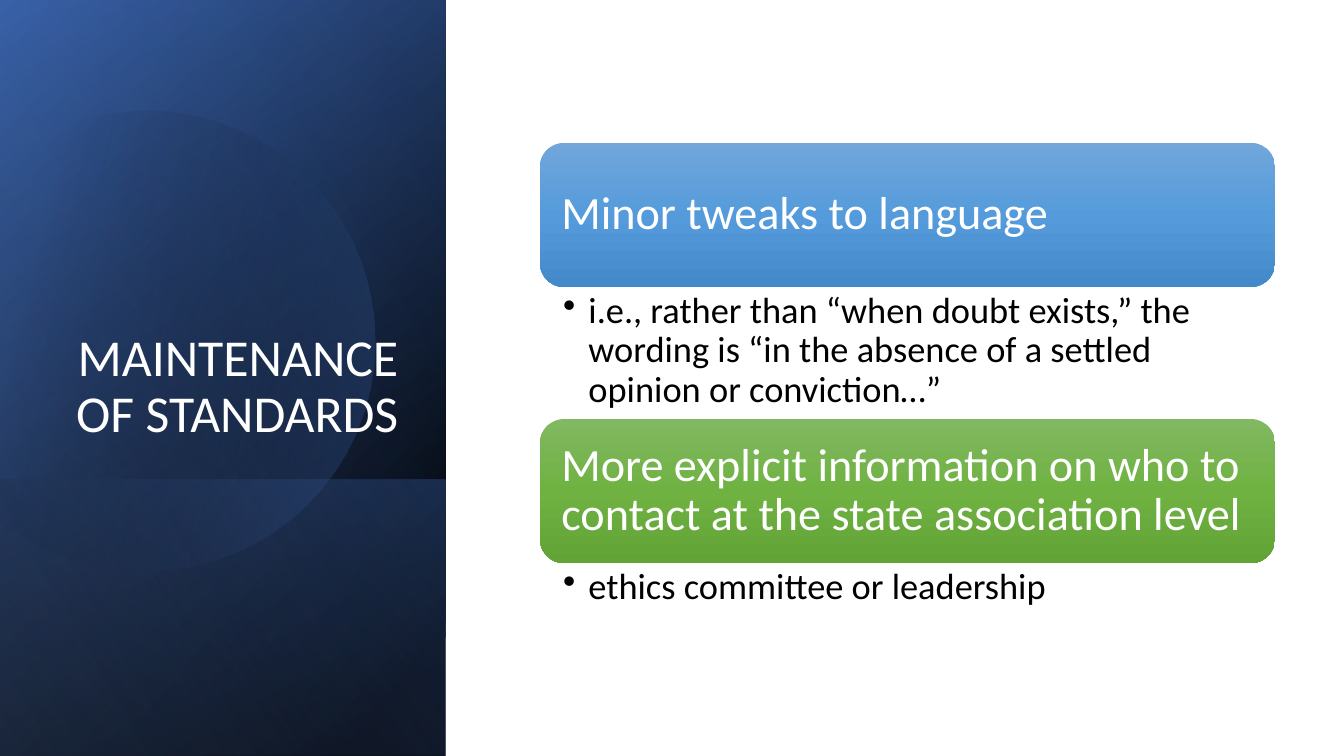
from math import cos, radians, sin

from lxml import etree
from pptx import Presentation
from pptx.dml.color import RGBColor
from pptx.enum.shapes import MSO_SHAPE
from pptx.enum.text import MSO_ANCHOR, PP_ALIGN
from pptx.oxml.ns import qn
from pptx.util import Cm, Pt

TITLE = "MAINTENANCE OF STANDARDS"
CARDS = [
    ("Minor tweaks to language",
     "i.e., rather than “when doubt exists,” the wording is “in the absence of a settled opinion or conviction…”",
     3.33, [(0, "71A6DB", 100), (50, "559BDB", 100), (100, "448ACA", 100)]),
    ("More explicit information on who to contact at the state association level",
     "ethics committee or leadership",
     1.52, [(0, "81B861", 100), (50, "6FB242", 100), (100, "62A336", 100)]),
]

SLIDE_W, SLIDE_H = 33.87, 19.05
PANEL_W = 11.23
BASE_LAYERS = [
    (SLIDE_H, [(8, "000000", 100), (100, "2F5597", 100)], 50),
    (SLIDE_H, [(0, "000000", 0), (99, "4472C4", 46)], 30),
    (6.96, [(2, "4472C4", 29), (100, "000000", 30)], 130),
]
TOP_LAYER = (SLIDE_H, [(0, "000000", 0), (99, "8FAADC", 11)], 120)

DISC_STOPS = [(29, "000000", 0), (100, "4472C4", 43)]
DISC_CENTER, DISC_TURN = (4.03, 8.5), 343.9
DISC_START = (3.78, 2.79)
DISC_SEGMENTS = [
    [(6.25, 2.84), (8.51, 4.5), (9.22, 6.99)],
    [(10.11, 10.08), (8.33, 13.28), (5.26, 14.17)],
    [(3.33, 14.73), (1.35, 14.25), (-0.08, 13.06)],
    [(-0.38, 12.78)],
    [(-0.38, 4.45)],
    [(0, 4.09)],
    [(0.58, 3.61), (1.27, 3.25), (2.03, 3.02)],
    [(2.62, 2.87), (3.2, 2.79), DISC_START],
]
CURVE_STEPS = 16
CARD_LEFT, CARD_TOP, CARD_W, CARD_H = 13.61, 3.6, 18.52, 3.63


def paint(shape, stops, angle):
    """Give a shape a linear gradient of (position, hex, opacity) stops."""
    shape.shadow.inherit = False
    shape.line.fill.background()
    shape.fill.background()
    gradient = etree.Element(qn("a:gradFill"), rotWithShape="1")
    stop_list = etree.SubElement(gradient, qn("a:gsLst"))
    for position, color, opacity in stops:
        stop = etree.SubElement(stop_list, qn("a:gs"), pos=str(position * 1000))
        tone = etree.SubElement(stop, qn("a:srgbClr"), val=color)
        if opacity < 100:
            etree.SubElement(tone, qn("a:alpha"), val=str(opacity * 1000))
    etree.SubElement(gradient, qn("a:lin"), ang=str(angle * 60000), scaled="0")
    properties = shape.element.spPr
    properties.replace(properties.find(qn("a:noFill")), gradient)


def write(shape, text, size, color="FFFFFF", align=PP_ALIGN.LEFT,
          anchor=MSO_ANCHOR.TOP, insets=(0.25, 0.13, 0.25, 0.13), bullet=None):
    """Fill a shape with one formatted paragraph."""
    frame = shape.text_frame
    frame.word_wrap = True
    frame.vertical_anchor = anchor
    (frame.margin_left, frame.margin_top,
     frame.margin_right, frame.margin_bottom) = map(Cm, insets)
    paragraph = frame.paragraphs[0]
    paragraph.alignment = align
    paragraph.line_spacing = 0.9
    run = paragraph.add_run()
    run.text = text
    run.font.name = "Calibri"
    run.font.size = Pt(size)
    run.font.color.rgb = RGBColor.from_string(color)
    if bullet:
        paragraph.level = 1
        properties = paragraph._p.get_or_add_pPr()
        properties.set("marL", str(Cm(0.64)))
        properties.set("indent", str(-Cm(0.64)))
        etree.SubElement(properties, qn("a:buChar"), char=bullet)


def add_layer(shapes, length, stops, angle):
    """Add a turned, mirrored panel layer that ends at the slide's bottom."""
    layer = shapes.add_shape(
        MSO_SHAPE.RECTANGLE, Cm((PANEL_W - length) / 2),
        Cm(SLIDE_H - (length + PANEL_W) / 2), Cm(length), Cm(PANEL_W))
    layer.rotation = 90
    layer.element.spPr.find(qn("a:xfrm")).set("flipH", "1")
    paint(layer, stops, angle)


def bezier(points, t):
    """Return the point at t on a cubic curve."""
    weights = ((1 - t) ** 3, 3 * t * (1 - t) ** 2, 3 * t * t * (1 - t), t ** 3)
    return tuple(sum(w * p[axis] for w, p in zip(weights, points)) for axis in (0, 1))


def unturn(point):
    """Undo the disc's rotation and return the point as lengths."""
    turn = radians(-DISC_TURN)
    dx, dy = (value - middle for value, middle in zip(point, DISC_CENTER))
    return (Cm(DISC_CENTER[0] + dx * cos(turn) - dy * sin(turn)),
            Cm(DISC_CENTER[1] + dx * sin(turn) + dy * cos(turn)))


def add_disc(shapes):
    """Add the large translucent disc cut off at the left edge."""
    outline = [DISC_START]
    for segment in DISC_SEGMENTS:
        if len(segment) == 1:
            outline += segment
        else:
            curve = [outline[-1], *segment]
            outline += [bezier(curve, step / CURVE_STEPS)
                        for step in range(1, CURVE_STEPS + 1)]
    start, *rest = map(unturn, outline[:-1])
    builder = shapes.build_freeform(*start)
    builder.add_line_segments(rest, close=True)
    disc = builder.convert_to_shape()
    disc.rotation = DISC_TURN
    paint(disc, DISC_STOPS, 30)


def add_cards(shapes):
    """Stack each heading card with its bullet below."""
    top = CARD_TOP
    for heading, detail, detail_h, stops in CARDS:
        card = shapes.add_shape(MSO_SHAPE.ROUNDED_RECTANGLE, Cm(CARD_LEFT), Cm(top),
                                Cm(CARD_W), Cm(CARD_H))
        paint(card, stops, 90)
        write(card, heading, 33, anchor=MSO_ANCHOR.MIDDLE, insets=(0.36,) * 4)
        top += CARD_H
        note = shapes.add_textbox(Cm(CARD_LEFT), Cm(top), Cm(CARD_W), Cm(detail_h))
        write(note, detail, 26, color="000000", insets=(0.58, 0.13, 0.66, 0.13),
              bullet="•")
        top += detail_h


def main():
    """Build and save the slide."""
    deck = Presentation()
    deck.slide_width, deck.slide_height = Cm(SLIDE_W), Cm(SLIDE_H)
    shapes = deck.slides.add_slide(deck.slide_layouts[6]).shapes
    for layer in BASE_LAYERS:
        add_layer(shapes, *layer)
    add_disc(shapes)
    add_layer(shapes, *TOP_LAYER)
    title = shapes.add_textbox(Cm(1.63), Cm(4.67), Cm(8.66), Cm(6.65))
    write(title, TITLE, 37, align=PP_ALIGN.RIGHT, anchor=MSO_ANCHOR.BOTTOM)
    add_cards(shapes)
    deck.save("out.pptx")


if __name__ == "__main__":
    main()
